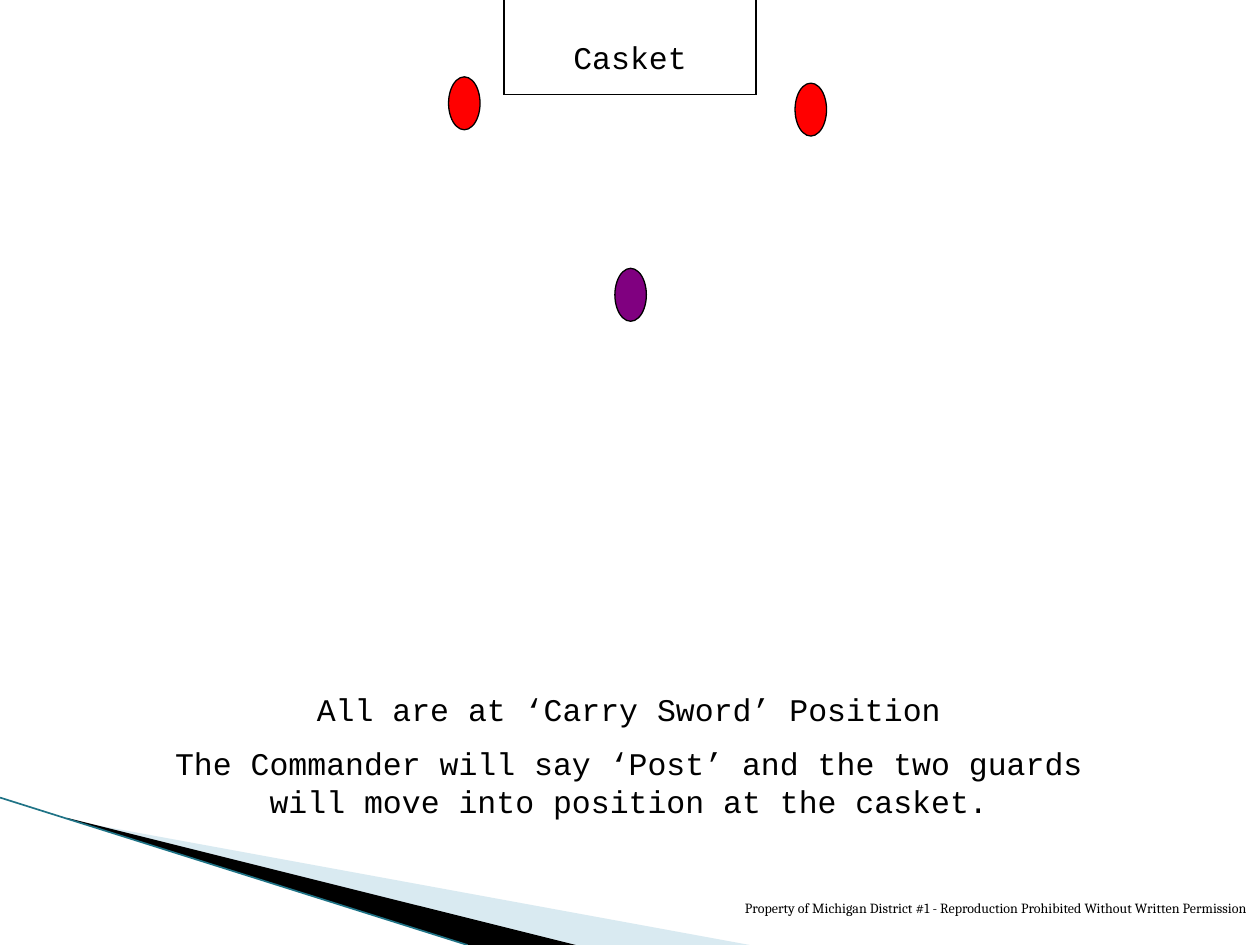
from pptx import Presentation
from pptx.dml.color import RGBColor
from pptx.enum.shapes import MSO_CONNECTOR, MSO_SHAPE
from pptx.enum.text import PP_ALIGN
from pptx.oxml.ns import qn
from pptx.util import Inches, Pt
from lxml.etree import SubElement

THEME = {
    "black": RGBColor.from_string("000000"),
    "pale": RGBColor.from_string("A0CBDC"),
    "teal": RGBColor.from_string("1F7386"),
    "guard": RGBColor.from_string("FF0000"),
    "commander": RGBColor.from_string("800080"),
    "body": {"size": Pt(18), "name": "Courier New"},
    "footer": {"size": Pt(8), "name": "Cambria"},
}

prs = Presentation()
prs.slide_width, prs.slide_height = Inches(10), Inches(7.5)
s = prs.slides.add_slide(prs.slide_layouts[6])

wedges = [
    ([(0.55, 6.51), (5.95, 7.5), (4.56, 7.5), (0.55, 6.5)], "pale", 40),
    ([(0.53, 6.49), (4.57, 7.5), (3.72, 7.5), (0.54, 6.5)], "black", 100),
]
for points, color, opacity in wedges:
    start, *rest = [(Inches(x), Inches(y)) for x, y in points]
    builder = s.shapes.build_freeform(*start, scale=1.0)
    builder.add_line_segments(rest, close=True)
    sp = builder.convert_to_shape()
    sp.shadow.inherit = False
    sp.fill.solid()
    sp.fill.fore_color.rgb = THEME[color]
    sp.line.fill.background()
    if opacity < 100:
        rgb = sp.fill._xPr.find(qn("a:solidFill"))[0]
        SubElement(rgb, qn("a:alpha"), val=str(opacity * 1000))

lines = [
    (0, 6.33, 3.71, 7.5, "teal", 0.95),
    (4, 0.75, 6, 0.75, "black", 0.75),
    (4, 0.75, 4, 0, "black", 0.75),
    (6, 0.75, 6, 0, "black", 0.75),
]
for x1, y1, x2, y2, color, width in lines:
    ends = [Inches(v) for v in (x1, y1, x2, y2)]
    line = s.shapes.add_connector(MSO_CONNECTOR.STRAIGHT, *ends)
    line.line.color.rgb = THEME[color]
    line.line.width = Pt(width)
    SubElement(line._element.spPr, qn("a:effectLst"))

people = [(4.88, 2.13, "commander"), (6.31, 0.66, "guard"), (3.56, 0.61, "guard")]
for x, y, color in people:
    sp = s.shapes.add_shape(
        MSO_SHAPE.OVAL, Inches(x), Inches(y), Inches(0.25), Inches(0.42)
    )
    sp.shadow.inherit = False
    sp.fill.solid()
    sp.fill.fore_color.rgb = THEME[color]
    sp.line.color.rgb = THEME["black"]
    sp.line.width = Pt(0.75)

texts = [
    ((4.29, 0.25, 1.42, 0.4), ["Casket"], "body", PP_ALIGN.CENTER),
    (
        (0.99, 5.43, 8, 1.15),
        [
            "All are at ‘Carry Sword’ Position",
            "The Commander will say ‘Post’ and the two guards will move into position at the casket.",
        ],
        "body",
        PP_ALIGN.CENTER,
    ),
    (
        (4.25, 7.09, 5.75, 0.26),
        ["Property of Michigan District #1 - Reproduction Prohibited Without Written Permission"],
        "footer",
        PP_ALIGN.RIGHT,
    ),
]
for box, paragraphs, style, align in texts:
    tf = s.shapes.add_textbox(*[Inches(v) for v in box]).text_frame
    tf.word_wrap = True
    if style == "footer":
        tf.margin_right = Inches(0.1)
    for i, text in enumerate(paragraphs):
        p = tf.add_paragraph() if i else tf.paragraphs[0]
        p.alignment = align
        p.space_before = Pt(9 if i else 0)
        r = p.add_run()
        r.text = text
        r.font.color.rgb = THEME["black"]
        for name, value in THEME[style].items():
            setattr(r.font, name, value)

prs.save("out.pptx")
